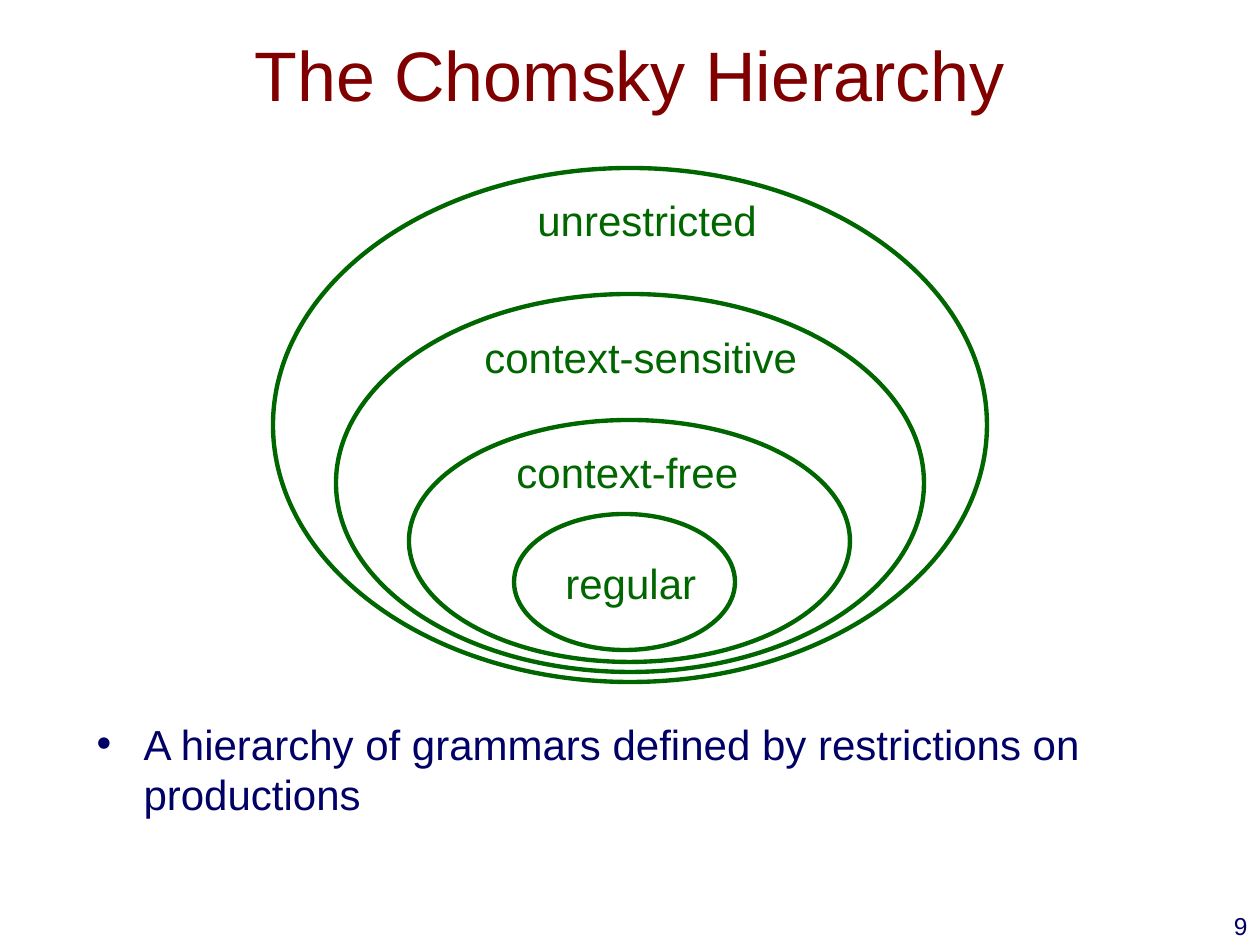
import pptx
import pptx.dml.color
import pptx.enum.shapes
import pptx.enum.text
import pptx.oxml
import pptx.util

ALIGN = pptx.enum.text.PP_ALIGN
ANCHOR = pptx.enum.text.MSO_ANCHOR


def color(value):
    return pptx.dml.color.RGBColor.from_string(value)


def px(length):
    return pptx.util.Emu(round(length * 914400 / 126))


class SlideBuilder:
    """Draws styled elements on the current slide."""

    font = "Arial"
    title_color = "800000"
    body_color = "000066"
    diagram_color = "006600"

    def __init__(self, presentation):
        self.slide = presentation.slides.add_slide(presentation.slide_layouts[1])

    def place(self, shape, left, top, width, height):
        shape.left, shape.top = px(left), px(top)
        shape.width, shape.height = px(width), px(height)

    def fill_text(self, shape, text, size, text_color, align, wrap=True, anchor=ANCHOR.TOP):
        frame = shape.text_frame
        frame.auto_size = pptx.enum.text.MSO_AUTO_SIZE.NONE
        frame.word_wrap = wrap
        frame.vertical_anchor = anchor
        paragraph = frame.paragraphs[0]
        paragraph.alignment = align
        run = paragraph.add_run()
        run.text = text
        run.font.name = self.font
        run.font.size = pptx.util.Pt(size)
        run.font.color.rgb = color(text_color)
        return paragraph

    def title(self, text, *box):
        shape = self.slide.shapes.title
        self.place(shape, *box)
        self.fill_text(shape, text, 40, self.title_color, ALIGN.CENTER, anchor=ANCHOR.MIDDLE)

    def bullet(self, text, *box):
        shape = self.slide.placeholders[1]
        self.place(shape, *box)
        paragraph = self.fill_text(shape, text, 24, self.body_color, ALIGN.LEFT)
        properties = paragraph._p.get_or_add_pPr()
        properties.set("marL", str(px(47)))
        properties.set("indent", str(-px(47)))
        mark = pptx.oxml.parse_xml(
            '<a:buChar xmlns:a="http://schemas.openxmlformats.org/drawingml/2006/main" char="•"/>'
        )
        properties.append(mark)

    def text(self, text, size, text_color, align, wrap, *box):
        shape = self.slide.shapes.add_textbox(*map(px, box))
        self.fill_text(shape, text, size, text_color, align, wrap)

    def label(self, text, *box):
        self.text(text, 24, self.diagram_color, ALIGN.LEFT, False, *box)

    def page_number(self, text, *box):
        self.text(text, 14, self.body_color, ALIGN.RIGHT, True, *box)

    def ellipse(self, *box):
        oval = pptx.enum.shapes.MSO_SHAPE.OVAL
        shape = self.slide.shapes.add_shape(oval, *map(px, box))
        shape.shadow.inherit = False
        shape.fill.background()
        shape.line.color.rgb = color(self.diagram_color)
        shape.line.width = pptx.util.Pt(2.5)


def main():
    presentation = pptx.Presentation()
    presentation.slide_width, presentation.slide_height = px(1260), px(945)
    builder = SlideBuilder(presentation)
    builder.title("The Chomsky Hierarchy", 94, -5, 1071, 158)

    grammar_classes = [
        ("regular", (553, 551, 156, 63), (514, 514, 221, 136)),
        ("context-free", (504, 440, 247, 63), (409, 420, 441, 242)),
        ("context-sensitive", (472, 325, 338, 63), (336, 294, 588, 378)),
        ("unrestricted", (525, 188, 244, 63), (273, 168, 714, 514)),
    ]
    for name, label_box, ellipse_box in grammar_classes:
        builder.ellipse(*ellipse_box)
        builder.label(name, *label_box)

    builder.bullet(
        "A hierarchy of grammars defined by restrictions on productions",
        84, 712, 1071, 199,
    )
    builder.page_number("9", 998, 905, 262, 63)
    presentation.save("out.pptx")


if __name__ == "__main__":
    main()
